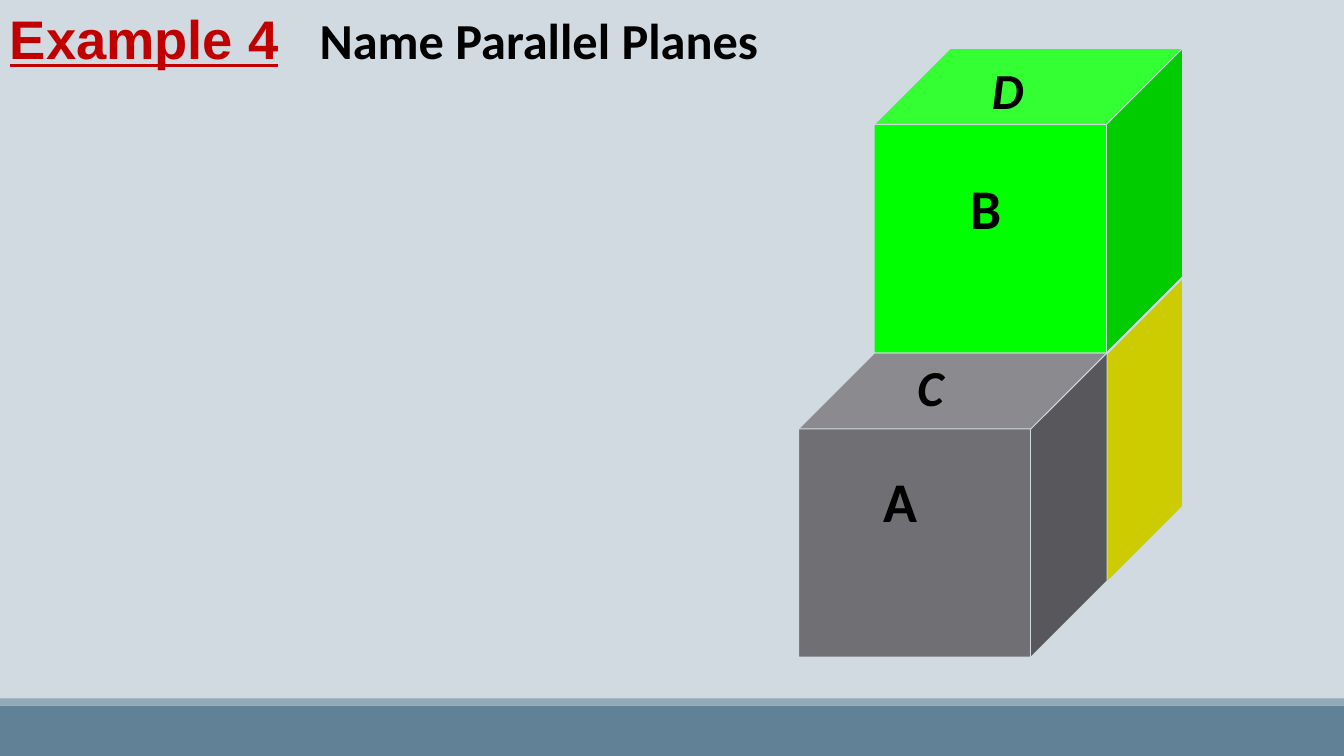
"""Build the slide on naming parallel planes with stacked cubes."""
from dataclasses import dataclass

from pptx import Presentation
from pptx.dml.color import RGBColor as Rgb
from pptx.enum.shapes import MSO_SHAPE as Kind
from pptx.enum.text import MSO_AUTO_SIZE as Fit
from pptx.util import Pt


@dataclass(frozen=True)
class Theme:
    back: str = "D1D9E1"
    base: str = "618197"
    trim: str = "92A9B9"
    ink: str = "000000"
    red: str = "C00000"
    gold: str = "FFFF00"
    gray: str = "6F6F74"
    green: str = "00FF00"
    tag: float = 38.8
    head: int = 36
    front: int = 40
    top: int = 36
    edge: float = 0.75


LOOK = Theme()
UNIT = 9144
WIDE, HIGH = 1333, 750
CUBE = (306, 302)
BARS = [(700, 50, LOOK.base), (693, 7, LOOK.trim)]
CUBES = [(867, 276, LOOK.gold), (792, 350, LOOK.gray), (867, 48, LOOK.green)]
FRONTS = [("B", 952, 167), ("A", 866, 458)]
TOPS = [("C", 900, 348), ("D", 974, 54)]


def px(*vals):
    return [val * UNIT for val in vals]


def add_solid(slide, kind, box, fill, line=None):
    shape = slide.shapes.add_shape(kind, *px(*box))
    shape.shadow.inherit = False
    shape.fill.solid()
    shape.fill.fore_color.rgb = Rgb.from_string(fill)
    if line:
        shape.line.color.rgb = Rgb.from_string(line)
        shape.line.width = Pt(LOOK.edge)
    else:
        shape.line.fill.background()
    return shape


def add_text(slide, text, box, size, face="Calibri", color=LOOK.ink,
             wrap=True, fit=Fit.SHAPE_TO_FIT_TEXT):
    frame = slide.shapes.add_textbox(*px(*box)).text_frame
    frame.word_wrap = wrap
    frame.auto_size = fit
    para = frame.paragraphs[0]
    para.text = text
    font = para.font
    font.name, font.size, font.bold = face, Pt(size), True
    font.color.rgb = Rgb.from_string(color)
    return frame


def add_head(slide):
    frame = add_text(slide, "Name Parallel Planes", (317, 21, 929, 55),
                     LOOK.head, fit=Fit.NONE)
    frame.margin_left = frame.margin_right = 0
    para = frame.paragraphs[0]
    para.line_spacing = 0.7
    para.space_before, para.space_after = Pt(12), Pt(2)
    props = para._p.get_or_add_pPr()
    props.set("marL", str(10 * UNIT))
    props.set("indent", str(-10 * UNIT))


def main():
    deck = Presentation()
    deck.slide_width, deck.slide_height = px(WIDE, HIGH)
    slide = deck.slides.add_slide(deck.slide_layouts[6])
    back = slide.background.fill
    back.solid()
    back.fore_color.rgb = Rgb.from_string(LOOK.back)

    for top, tall, fill in BARS:
        add_solid(slide, Kind.RECTANGLE, (0, top, WIDE, tall), fill)
    add_head(slide)
    tag = add_text(slide, "Example 4", (0, 0, 294, 75), LOOK.tag,
                   "Arial", LOOK.red)
    tag.paragraphs[0].font.underline = True

    for left, top, fill in CUBES:
        cube = add_solid(slide, Kind.CUBE, (left, top, *CUBE), fill, LOOK.back)
        cube.adjustments[0] = 0.25
    for name, left, top in FRONTS:
        add_text(slide, name, (left, top, 61, 78), LOOK.front, wrap=False)
    for name, left, top in TOPS:
        label = add_text(slide, name, (left, top, 86, 71), LOOK.top)
        label.paragraphs[0].font.italic = True
    deck.save("out.pptx")


if __name__ == "__main__":
    main()
